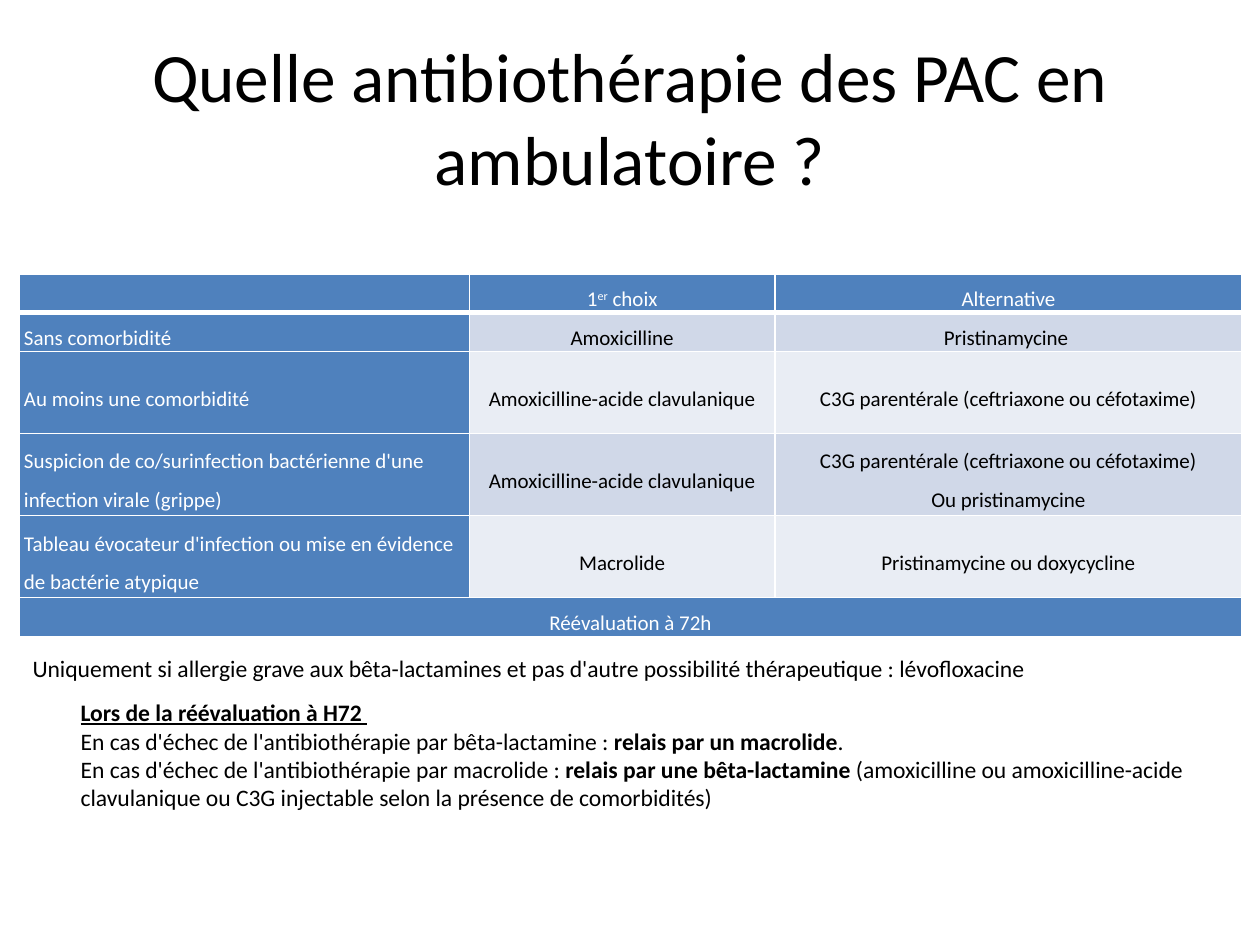
from lxml.etree import SubElement
from pptx import Presentation
from pptx.dml.color import RGBColor
from pptx.enum.text import MSO_ANCHOR, PP_ALIGN
from pptx.oxml.ns import qn
from pptx.util import Pt

COLORS = {"header": "4F81BD", "odd": "D0D8E8", "even": "E9EDF4",
          "light": "FFFFFF", "dark": "000000"}
FONT = "Calibri"

TITLE = "Quelle antibiothérapie des PAC en ambulatoire ?"
TREATMENTS = [
    ["", [("1", ""), ("er", "super"), (" choix", "")], "Alternative"],
    ["Sans comorbidité", "Amoxicilline", "Pristinamycine "],
    ["Au moins une comorbidité", "Amoxicilline-acide clavulanique",
     "C3G parentérale (ceftriaxone ou céfotaxime)"],
    ["Suspicion de co/surinfection bactérienne d'une infection virale (grippe)",
     "Amoxicilline-acide clavulanique",
     "C3G parentérale (ceftriaxone ou céfotaxime)\nOu pristinamycine"],
    ["Tableau évocateur d'infection ou mise en évidence de bactérie atypique",
     "Macrolide", "Pristinamycine ou doxycycline"],
    ["Réévaluation à 72h", "", ""],
]
COLUMN_WIDTHS = [257.5, 174.5, 267]
ROW_HEIGHTS = [22.2, 22.2, 46.9, 46.9, 46.9, 22.2]
ALLERGY = ("Uniquement si allergie grave aux bêta-lactamines et pas d'autre "
           "possibilité thérapeutique : lévofloxacine")
REASSESSMENT = [
    [("Lors de la réévaluation à H72 ", "bold underline")],
    [("En cas d'échec de l'antibiothérapie par bêta-lactamine : ", ""),
     ("relais par un macrolide", "bold"), (".", "")],
    [("En cas d'échec de l'antibiothérapie par macrolide : ", ""),
     ("relais par une bêta-lactamine ", "bold"),
     ("(amoxicilline ou amoxicilline-acide clavulanique ou C3G injectable "
      "selon la présence de comorbidités)", "")],
]


def rgb(name):
    return RGBColor.from_string(COLORS[name])


def write(frame, lines, size, color="dark", align=PP_ALIGN.LEFT, spacing=None):
    for i, line in enumerate(lines):
        paragraph = frame.paragraphs[0] if i == 0 else frame.add_paragraph()
        paragraph.alignment = align
        paragraph.line_spacing = spacing
        paragraph.font.name = FONT
        paragraph.font.size = Pt(size)
        paragraph.font.color.rgb = rgb(color)
        for text, style in [(line, "")] if isinstance(line, str) else line:
            run = paragraph.add_run()
            run.text = text
            if "bold" in style:
                run.font.bold = True
            if "underline" in style:
                run.font.underline = True
            if "super" in style:
                run.font._element.set("baseline", "30000")


def add_text(slide, box, lines, size, **options):
    frame = slide.shapes.add_textbox(*map(Pt, box)).text_frame
    frame.word_wrap = True
    write(frame, lines, size, **options)
    return frame


def set_borders(cell, bottom):
    properties = cell._tc.get_or_add_tcPr()
    for i, (side, width) in enumerate(
            [("lnL", 1), ("lnR", 1), ("lnT", 1), ("lnB", bottom)]):
        line = properties.makeelement(qn(f"a:{side}"), {"w": str(Pt(width))})
        fill = SubElement(line, qn("a:solidFill"))
        SubElement(fill, qn("a:srgbClr"), val=COLORS["light"])
        properties.insert(i, line)


def add_treatments(slide):
    table = slide.shapes.add_table(
        len(ROW_HEIGHTS), len(COLUMN_WIDTHS), Pt(10.8), Pt(156.5),
        Pt(sum(COLUMN_WIDTHS)), Pt(sum(ROW_HEIGHTS))).table
    table.first_row = table.horz_banding = False
    for column, width in zip(table.columns, COLUMN_WIDTHS):
        column.width = Pt(width)
    for row, height in zip(table.rows, ROW_HEIGHTS):
        row.height = Pt(height)
    last = len(TREATMENTS) - 1
    table.cell(last, 0).merge(table.cell(last, len(COLUMN_WIDTHS) - 1))
    for r, treatment in enumerate(TREATMENTS):
        for c, content in enumerate(treatment):
            cell = table.cell(r, c)
            heading = r in (0, last) or c == 0
            cell.fill.solid()
            cell.fill.fore_color.rgb = rgb(
                "header" if heading else "odd" if r % 2 else "even")
            set_borders(cell, 3 if r == 0 else 1)
            cell.vertical_anchor = MSO_ANCHOR.MIDDLE
            cell.margin_left = cell.margin_right = Pt(2.9)
            cell.margin_top = cell.margin_bottom = 0
            if content:
                lines = content.split("\n") if isinstance(content, str) else [content]
                write(cell.text_frame, lines, 12,
                      color="light" if heading else "dark",
                      align=PP_ALIGN.LEFT if c == 0 and r != last else PP_ALIGN.CENTER,
                      spacing=1.5)


def main():
    deck = Presentation()
    deck.slide_width, deck.slide_height = Pt(720), Pt(540)
    slide = deck.slides.add_slide(deck.slide_layouts[6])
    title = add_text(slide, (36, 21.6, 648, 90), [TITLE], 39.6,
                     align=PP_ALIGN.CENTER)
    title.vertical_anchor = MSO_ANCHOR.MIDDLE
    add_text(slide, (39, 395.5, 671, 72.5), REASSESSMENT, 13.5)
    add_treatments(slide)
    add_text(slide, (11.5, 370, 687.5, 23.5), [ALLERGY], 13.5)
    deck.save("out.pptx")


if __name__ == "__main__":
    main()
